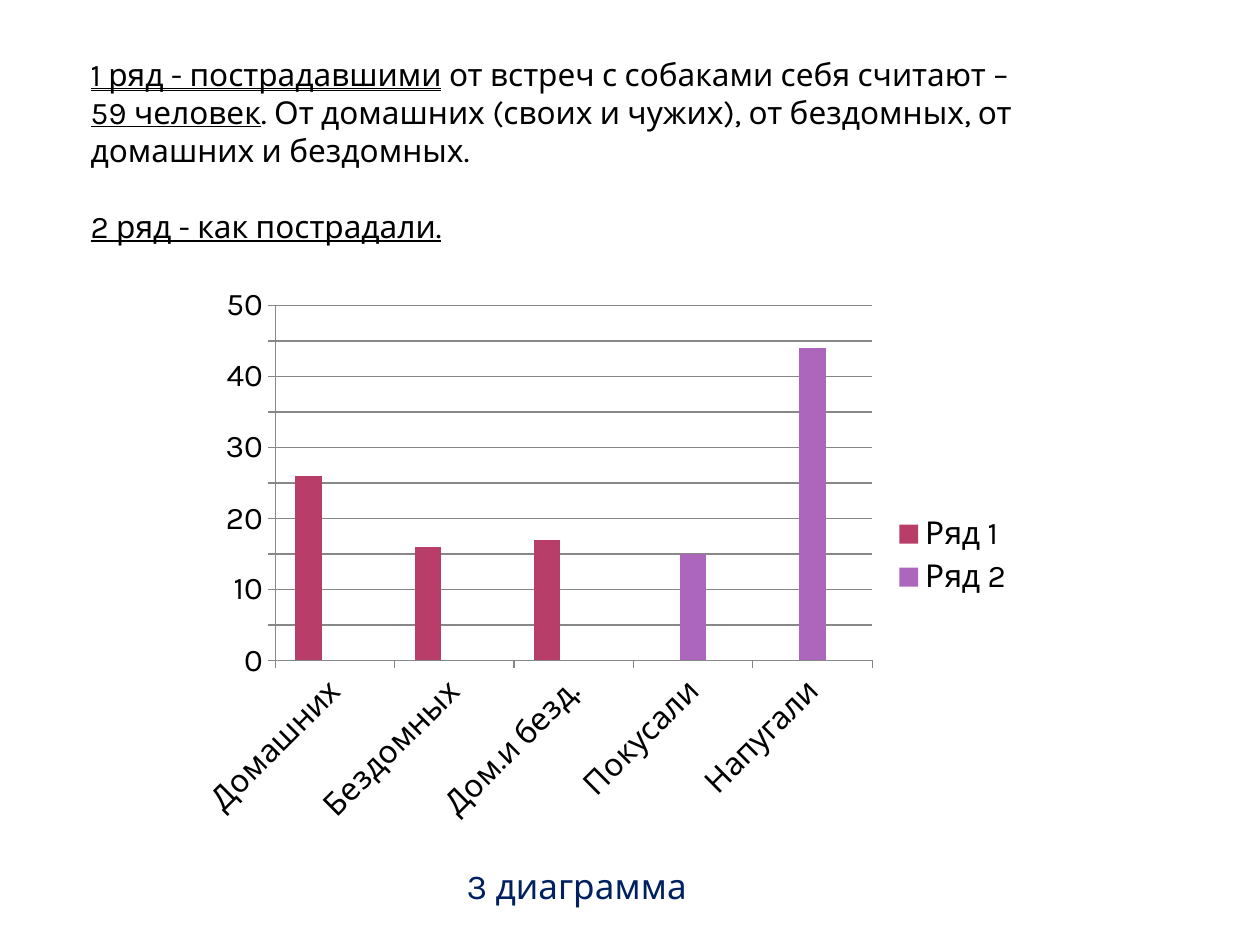
import pptx
import pptx.chart.data
import pptx.dml.color
import pptx.enum.chart
import pptx.enum.text
import pptx.oxml
import pptx.oxml.ns
import pptx.util

SINGLE = pptx.enum.text.MSO_UNDERLINE.SINGLE_LINE
DOUBLE = pptx.enum.text.MSO_UNDERLINE.DOUBLE_LINE


def color(value):
    return pptx.dml.color.RGBColor.from_string(value)


class SurveySlide:
    """Places text and charts by shares of the slide, in one style."""

    font_name = "Karla"
    ink = "000000"
    navy = "002060"
    grid = "878787"

    def __init__(self, deck):
        self.deck = deck
        self.slide = deck.slides.add_slide(deck.slide_layouts[6])

    def area(self, left, top, width, height):
        wide, high = self.deck.slide_width, self.deck.slide_height
        return [round(part) for part in (left * wide, top * high, width * wide, height * high)]

    def style(self, font, size, ink=None):
        font.name = self.font_name
        font.size = pptx.util.Pt(size)
        font.color.rgb = color(ink or self.ink)

    def text(self, shares, paragraphs, size=18, ink=None, align=None, anchor=None, gap=0):
        frame = self.slide.shapes.add_textbox(*self.area(*shares)).text_frame
        frame.word_wrap = True
        frame.vertical_anchor = anchor
        for index, pieces in enumerate(paragraphs):
            line = frame.add_paragraph() if index else frame.paragraphs[0]
            line.alignment = align
            self.style(line.font, size, ink)
            for words, underline in pieces:
                run = line.add_run()
                run.text = words
                if underline:
                    run.font.underline = underline
        if gap:
            line.space_before = pptx.util.Pt(gap)
        return frame

    def columns(self, shares, categories, series, hidden_entry):
        answers = pptx.chart.data.CategoryChartData()
        answers.categories = categories
        for name, values, _ in series:
            answers.add_series(name, values)
        kind = pptx.enum.chart.XL_CHART_TYPE.COLUMN_CLUSTERED
        chart = self.slide.shapes.add_chart(kind, *self.area(*shares), answers).chart
        chart.has_title = False
        self.style(chart.font, 18)
        plot = chart.plots[0]
        plot.gap_width = 150
        plot.vary_by_categories = False
        for bars, (_, _, fill) in zip(plot.series, series):
            bars.format.fill.solid()
            bars.format.fill.fore_color.rgb = color(fill)

        scale = chart.value_axis
        scale.minimum_scale, scale.maximum_scale, scale.major_unit = 0, 50, 5
        scale.has_major_gridlines = True
        for axis in (scale, chart.category_axis):
            axis.major_tick_mark = pptx.enum.chart.XL_TICK_MARK.OUTSIDE
            self.style(axis.tick_labels.font, 18)
        for lines in (scale, chart.category_axis, scale.major_gridlines):
            lines.format.line.color.rgb = color(self.grid)
            lines.format.line.width = pptx.util.Pt(0.75)
        label_body = chart.category_axis._element.find(
            pptx.oxml.ns.qn("c:txPr")).find(pptx.oxml.ns.qn("a:bodyPr"))
        label_body.set("rot", "-2700000")

        chart.has_legend = True
        chart.legend.position = pptx.enum.chart.XL_LEGEND_POSITION.RIGHT
        chart.legend.include_in_layout = False
        self.style(chart.legend.font, 18)
        entry = pptx.oxml.parse_xml(
            f'<c:legendEntry {pptx.oxml.ns.nsdecls("c")}>'
            f'<c:idx val="{hidden_entry}"/><c:delete val="1"/></c:legendEntry>')
        chart.legend._element.find(pptx.oxml.ns.qn("c:legendPos")).addnext(entry)


def main():
    deck = pptx.Presentation()
    deck.slide_width = pptx.util.Inches(10)
    deck.slide_height = pptx.util.Inches(7.5)
    survey = SurveySlide(deck)
    survey.columns(
        (0.148, 0.292, 0.667, 0.592),
        ["Домашних", "Бездомных", "Дом.и безд.", "Покусали", "Напугали"],
        [("Ряд 1", (26, 16, 17, None, None), "B83D68"),
         ("Ряд 2", (None, None, None, 15, 44), "AC66BB"),
         ("Series 3", (None,) * 5, "DE6C36")],
        hidden_entry=2)
    caption = survey.text(
        (0.258, 0.875, 0.297, 0.084), [[("3 диаграмма", None)]], size=20,
        ink=survey.navy, align=pptx.enum.text.PP_ALIGN.RIGHT,
        anchor=pptx.enum.text.MSO_ANCHOR.BOTTOM)
    caption.margin_top = caption.margin_bottom = 0
    findings = survey.text(
        (0.062, 0.052, 0.789, 0.216),
        [[("1 ряд - пострадавшими", DOUBLE), (" от встреч с собаками себя считают –", None)],
         [("59 человек", SINGLE),
          (". От домашних (своих и чужих), от бездомных, от домашних и бездомных.", None)],
         [("2 ряд - как пострадали.", DOUBLE)]],
        gap=22)
    findings.auto_size = pptx.enum.text.MSO_AUTO_SIZE.SHAPE_TO_FIT_TEXT
    deck.save("out.pptx")


if __name__ == "__main__":
    main()
